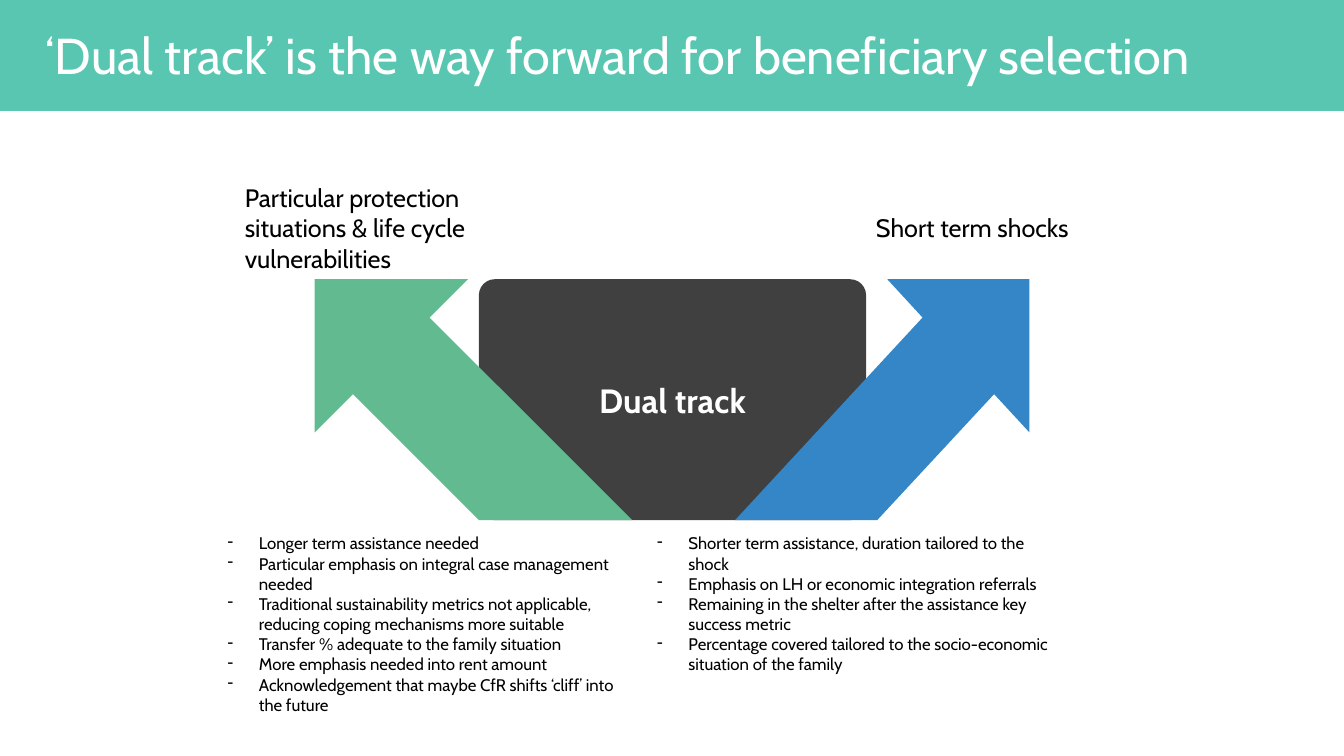
from dataclasses import dataclass

from lxml import etree
from pptx import Presentation
from pptx.dml.color import RGBColor
from pptx.enum.shapes import MSO_SHAPE as Shape
from pptx.enum.text import MSO_ANCHOR as Anchor, MSO_AUTO_SIZE as AutoSize, PP_ALIGN as Align
from pptx.oxml.ns import qn
from pptx.util import Pt

PX = 9144  # EMU per px, 100 px to the inch


@dataclass(frozen=True)
class Theme:
    font: str = "Cabin"
    white: str = "FFFFFF"
    black: str = "000000"
    header: str = "59C6B1"
    center: str = "404040"
    green: str = "61BA90"
    blue: str = "3586C7"
    title_size: int = 36
    center_size: int = 24
    label_size: int = 18
    bullet_size: int = 12


theme = Theme()


def paint(shape, color):
    shape.shadow.inherit = False
    shape.fill.solid()
    shape.fill.fore_color.rgb = RGBColor.from_string(color)
    shape.line.fill.background()


def add_span(para, text, size, color=theme.black, bold=False):
    span = para.add_run()
    span.text = text
    span.font.name = theme.font
    span.font.size = Pt(size)
    span.font.bold = bold
    span.font.color.rgb = RGBColor.from_string(color)


deck = Presentation()
deck.slide_width, deck.slide_height = 1333 * PX, 750 * PX
page = deck.slides.add_slide(deck.slide_layouts[5])

# Center block
center = page.shapes.add_shape(Shape.ROUNDED_RECTANGLE, 475 * PX, 277 * PX, 384 * PX, 239 * PX)
center.adjustments[0] = 0.066
paint(center, theme.center)
center.text_frame.vertical_anchor = Anchor.MIDDLE
center_para = center.text_frame.paragraphs[0]
center_para.alignment = Align.CENTER
add_span(center_para, "Dual track", theme.center_size, theme.white, bold=True)

# Diverging arrows
arrows = [
    (theme.blue, [(729, 516), (870, 516), (986, 391), (1021, 429),
                  (1021, 277), (880, 277), (915, 315)]),
    (theme.green, [(627, 516), (475, 516), (350, 391), (312, 429),
                   (312, 277), (464, 277), (426, 315)]),
]
for color, points in arrows:
    outline = page.shapes.build_freeform(*points[0], scale=PX)
    outline.add_line_segments(points[1:], close=True)
    paint(outline.convert_to_shape(), color)

# Header band and title
band = page.shapes.add_shape(Shape.RECTANGLE, 0, 0, deck.slide_width, 109 * PX)
paint(band, theme.header)
band.line.color.rgb = RGBColor.from_string(theme.header)
band.line.width = Pt(1.5)

title = page.shapes.title
band.element.addnext(title.element)
title.left, title.top, title.width, title.height = 45 * PX, 15 * PX, 1200 * PX, 78 * PX
frame = title.text_frame
frame.margin_left = frame.margin_right = frame.margin_top = frame.margin_bottom = 0
frame.vertical_anchor = Anchor.MIDDLE
frame.word_wrap = True
frame.auto_size = AutoSize.NONE
frame.paragraphs[0].alignment = Align.LEFT
add_span(frame.paragraphs[0], "‘Dual track’ is the way forward for beneficiary selection",
         theme.title_size, theme.white)

# Arrow labels and the bullet lists below: left, top, width, height, size, bulleted, lines
texts = [
    (233, 176, 276, 101, theme.label_size, False,
     ["Particular protection situations & life cycle vulnerabilities"]),
    (859, 206, 276, 40, theme.label_size, False, ["Short term shocks"]),
    (216, 524, 426, 222, theme.bullet_size, True, [
        "Longer term assistance needed",
        "Particular emphasis on integral case management needed",
        "Traditional sustainability metrics not applicable, reducing coping mechanisms more suitable",
        "Transfer % adequate to the family situation",
        "More emphasis needed into rent amount",
        "Acknowledgement that maybe CfR shifts ‘cliff’ into the future",
    ]),
    (642, 524, 426, 202, theme.bullet_size, True, [
        "Shorter term assistance, duration tailored to the shock",
        "Emphasis on LH or economic integration referrals",
        "Remaining in the shelter after the assistance key success metric",
        "Percentage covered tailored to the socio-economic situation of the family",
    ]),
]
for left, top, width, height, size, bulleted, lines in texts:
    box = page.shapes.add_textbox(left * PX, top * PX, width * PX, height * PX)
    frame = box.text_frame
    frame.word_wrap = True
    frame.auto_size = AutoSize.SHAPE_TO_FIT_TEXT
    for index, line in enumerate(lines):
        para = frame.add_paragraph() if index else frame.paragraphs[0]
        if bulleted:
            props = para._p.get_or_add_pPr()
            props.set("marL", str(31 * PX))
            props.set("indent", str(-31 * PX))
            etree.SubElement(props, qn("a:buChar")).set("char", "-")
        add_span(para, line, size)

deck.save("out.pptx")
